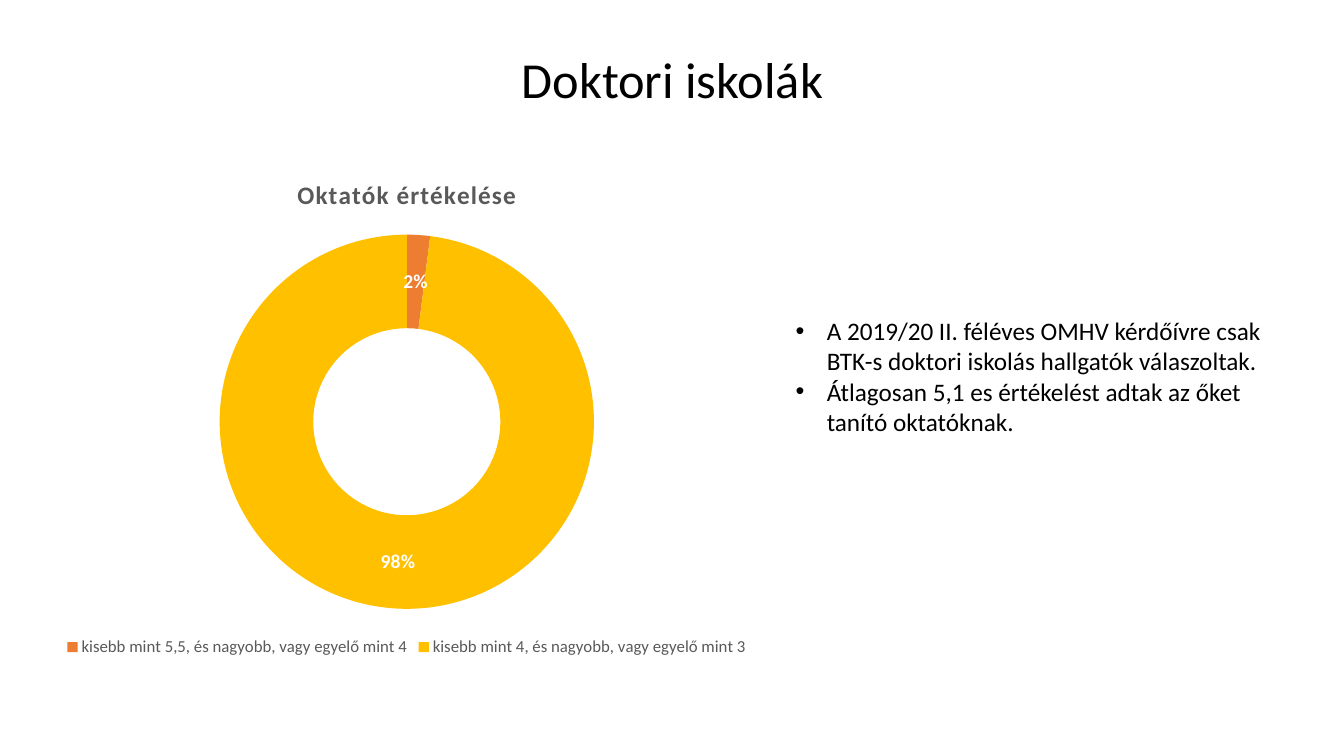
from lxml import etree
from pptx import Presentation
from pptx.chart.data import CategoryChartData
from pptx.dml.color import RGBColor
from pptx.enum.chart import XL_CHART_TYPE, XL_LEGEND_POSITION
from pptx.enum.text import MSO_ANCHOR, MSO_AUTO_SIZE, PP_ALIGN
from pptx.oxml import parse_xml
from pptx.oxml.ns import nsdecls, qn
from pptx.util import Inches, Pt

RING = XL_CHART_TYPE.DOUGHNUT
BOTTOM = XL_LEGEND_POSITION.BOTTOM
MIDDLE = MSO_ANCHOR.MIDDLE
TOP = MSO_ANCHOR.TOP
FIXED = MSO_AUTO_SIZE.NONE
CENTER = PP_ALIGN.CENTER
LEFT = PP_ALIGN.LEFT

FACE = "Calibri"
BLACK, GREY, WHITE = "000000", "595959", "FFFFFF"
SHARES = [
    ("kisebb mint 5,5, és nagyobb, vagy egyelő mint 4", 2, "ED7D31"),
    ("kisebb mint 4, és nagyobb, vagy egyelő mint 3", 98, "FFC000"),
]
POINTS = [
    "A 2019/20 II. féléves OMHV kérdőívre csak BTK-s doktori iskolás hallgatók válaszoltak.",
    "Átlagosan 5,1 es értékelést adtak az őket tanító oktatóknak.",
]


def color(code):
    """Return the colour for a hex string."""
    return RGBColor.from_string(code)


def style(font, size, code=BLACK, bold=False):
    """Set face, size, colour and weight of a font."""
    font.name, font.size, font.bold = FACE, Pt(size), bold
    font.color.rgb = color(code)


def write(para, text, size=18, code=BLACK, bold=False, align=LEFT, line=1.0, track=0):
    """Add formatted text to a paragraph."""
    para.alignment, para.line_spacing = align, line
    para.space_before = para.space_after = Pt(0)
    run = para.add_run()
    run.text = text
    style(run.font, size, code, bold)
    if track:
        run.font._element.set("spc", str(track))


def place(holder, left, top, width, height, anchor):
    """Move a placeholder and prepare its text frame."""
    holder.left, holder.top = Inches(left), Inches(top)
    holder.width, holder.height = Inches(width), Inches(height)
    frame = holder.text_frame
    frame.word_wrap, frame.auto_size = True, FIXED
    frame.vertical_anchor = anchor
    return frame


def bullet(para):
    """Give a paragraph a hanging round bullet."""
    props = para._p.get_or_add_pPr()
    indent = Inches(0.31)
    props.set("marL", str(indent))
    props.set("indent", str(-indent))
    etree.SubElement(props, qn("a:buFont")).set("typeface", "Arial")
    etree.SubElement(props, qn("a:buChar")).set("char", "•")


def add_list(frame, items):
    """Write items as bulleted paragraphs."""
    for index, item in enumerate(items):
        para = frame.add_paragraph() if index else frame.paragraphs[0]
        write(para, item)
        bullet(para)


def set_plot(chart, left, top, width, height):
    """Fix the plot area as fractions of the chart."""
    area = chart._chartSpace.chart.plotArea
    for old in area.findall(qn("c:layout")):
        area.remove(old)
    spots = {"x": left, "y": top, "w": width, "h": height}
    parts = "".join(f'<c:{key} val="{val}"/>' for key, val in spots.items())
    area.insert(0, parse_xml(
        f'<c:layout {nsdecls("c")}><c:manualLayout><c:layoutTarget val="inner"/>'
        f'<c:xMode val="edge"/><c:yMode val="edge"/>{parts}</c:manualLayout></c:layout>'))


def add_ring(slide, title, shares):
    """Add the doughnut chart with title, legend and labels."""
    data = CategoryChartData()
    data.categories = [name for name, _, _ in shares]
    data.add_series("Series 1", [value for _, value, _ in shares])
    chart = slide.shapes.add_chart(
        RING, Inches(0), Inches(1.56), Inches(8.07), Inches(5), data).chart
    style(chart.font, 10)
    chart.has_title = True
    write(chart.chart_title.text_frame.paragraphs[0], title,
          code=GREY, bold=True, align=CENTER, track=80)
    chart.chart_title.include_in_layout = False
    chart.has_legend = True
    chart.legend.position, chart.legend.include_in_layout = BOTTOM, False
    style(chart.legend.font, 12, GREY)
    plot = chart.plots[0]
    plot.vary_by_categories = True
    for index, (_, _, code) in enumerate(shares):
        fill = plot.series[0].points[index].format.fill
        fill.solid()
        fill.fore_color.rgb = color(code)
    labels = plot.series[0].data_labels
    labels.show_percentage, labels.show_value = True, False
    labels.number_format, labels.number_format_is_linked = "0%", False
    style(labels.font, 14, WHITE, True)
    set_plot(chart, 0.27, 0.15, 0.46, 0.75)


def main():
    """Build and save the slide."""
    deck = Presentation()
    deck.slide_width, deck.slide_height = Inches(13.33), Inches(7.5)
    slide = deck.slides.add_slide(deck.slide_layouts[1])
    head = place(slide.shapes.title, 0.92, 0.4, 11.5, 0.83, MIDDLE)
    write(head.paragraphs[0], "Doktori iskolák", size=36, align=CENTER, line=0.9)
    add_ring(slide, "Oktatók értékelése", SHARES)
    add_list(place(slide.placeholders[1], 7.79, 3.08, 5.24, 1.31, TOP), POINTS)
    deck.save("out.pptx")


if __name__ == "__main__":
    main()
